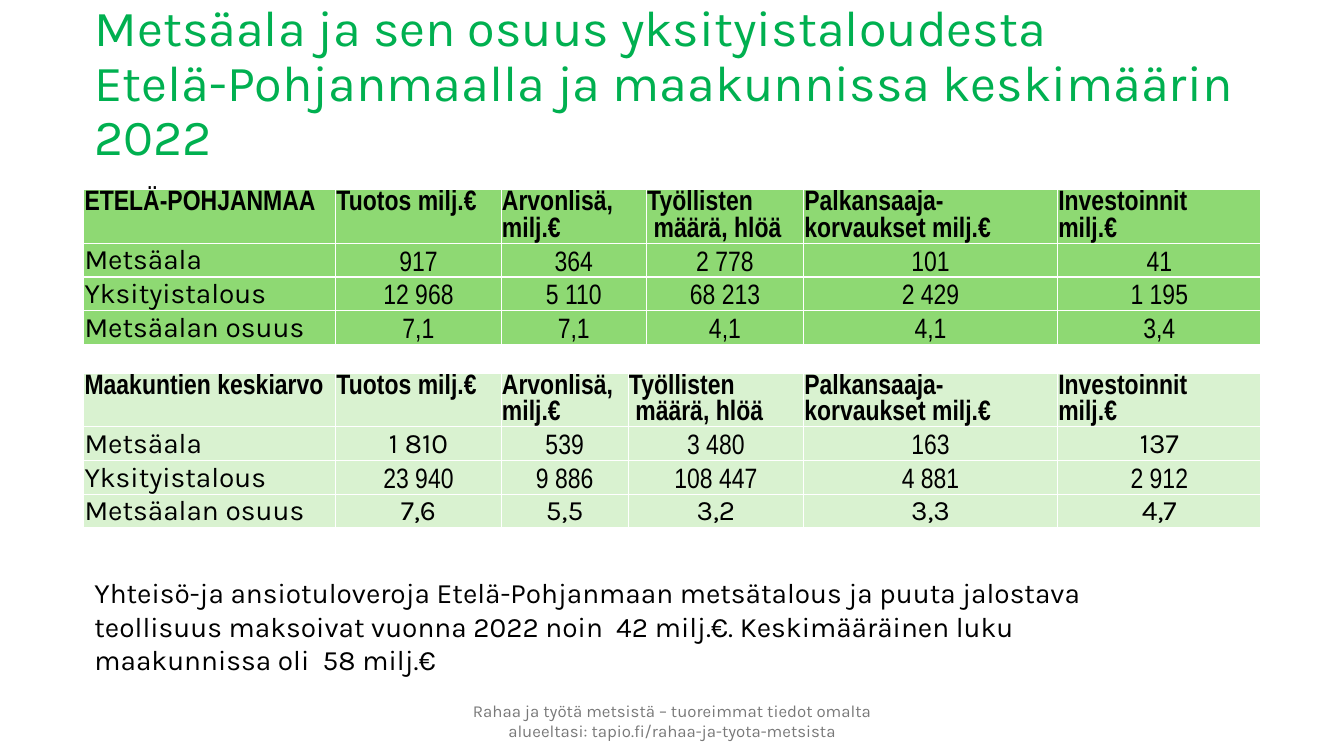
"""Build a slide comparing forestry's share of the regional economy."""
from dataclasses import dataclass

import pptx
import pptx.dml.color
import pptx.enum.text
import pptx.oxml
import pptx.oxml.ns
import pptx.util

Cm = pptx.util.Cm
Align = pptx.enum.text.PP_ALIGN
Anchor = pptx.enum.text.MSO_ANCHOR


@dataclass(frozen=True)
class Theme:
    text_font: str = "Karla"
    figure_font: str = "Arial Narrow"
    heading: str = "00B050"
    ink: str = "000000"
    muted: str = "797979"
    grid: str = "FFFFFF"
    region_fill: str = "8ED973"
    average_fill: str = "D9F2D0"
    heading_size: int = 36
    body_size: int = 20
    footer_size: int = 12
    grid_width: int = 1


THEME = Theme()

HEADING = [
    "Metsäala ja sen osuus yksityistaloudesta ",
    "Etelä-Pohjanmaalla ja maakunnissa keskimäärin 2022",
]
MEASURES = [
    ["Tuotos milj.€"],
    ["Arvonlisä, milj.€"],
    ["Työllisten", " määrä, hlöä"],
    ["Palkansaaja-korvaukset milj.€"],
    ["Investoinnit", "milj.€"],
]
SECTORS = ["Metsäala", "Yksityistalous", "Metsäalan osuus"]
AREAS = [
    {
        "name": "ETELÄ-POHJANMAA",
        "figures": [
            ["917", "364", "2 778", "101", "41"],
            ["12 968", "5 110", "68 213", "2 429", "1 195"],
            ["7,1", "7,1", "4,1", "4,1", "3,4"],
        ],
        "text_font_cells": set(),
        "fill": THEME.region_fill,
        "top": 4.78,
        "widths": [6.35, 4.17, 3.66, 3.96, 6.4, 5.13],
    },
    {
        "name": "Maakuntien keskiarvo",
        "figures": [
            ["1 810", "539", "3 480", "163", "137"],
            ["23 940", "9 886", "108 447", "4 881", "2 912"],
            ["7,6", "5,5", "3,2", "3,3", "4,7"],
        ],
        "text_font_cells": {(1, 1), (1, 5)} | {(3, column) for column in range(1, 6)},
        "fill": THEME.average_fill,
        "top": 9.4,
        "widths": [6.35, 4.17, 3.2, 4.42, 6.4, 5.13],
    },
]
TAXES = (
    "Yhteisö-ja ansiotuloveroja Etelä-Pohjanmaan metsätalous ja puuta jalostava "
    "teollisuus maksoivat vuonna 2022 noin  42 milj.€. Keskimääräinen luku "
    "maakunnissa oli  58 milj.€"
)
FOOTER = (
    "Rahaa ja työtä metsistä – tuoreimmat tiedot omalta alueeltasi: "
    "tapio.fi/rahaa-ja-tyota-metsista"
)

TABLE_LEFT = 2.11
ROW_HEIGHTS = [1.33, 0.85, 0.85, 0.85]
CELL_MARGIN = 0.02


def add_run(paragraph, text, size, color, font=THEME.text_font, bold=False):
    run = paragraph.add_run()
    run.text = text
    run.font.name = font
    run.font.size = pptx.util.Pt(size)
    run.font.bold = bold
    run.font.color.rgb = pptx.dml.color.RGBColor.from_string(color)


def add_heading(slide):
    title = slide.shapes.title
    title.left, title.top, title.width, title.height = map(Cm, (2.13, 0.3, 30.96, 3.68))
    frame = title.text_frame
    frame.word_wrap = True
    frame.auto_size = pptx.enum.text.MSO_AUTO_SIZE.NONE
    frame.vertical_anchor = Anchor.MIDDLE
    paragraph = frame.paragraphs[0]
    paragraph.alignment = Align.LEFT
    paragraph.line_spacing = 0.9
    for index, line in enumerate(HEADING):
        if index:
            paragraph.add_line_break()
        add_run(paragraph, line, THEME.heading_size, THEME.heading)


def add_note(slide, text, box, size, color, align, anchor):
    frame = slide.shapes.add_textbox(*map(Cm, box)).text_frame
    frame.word_wrap = True
    frame.vertical_anchor = anchor
    frame.paragraphs[0].alignment = align
    add_run(frame.paragraphs[0], text, size, color)


def style_cell(cell, fill, anchor):
    cell.margin_left = cell.margin_right = cell.margin_top = Cm(CELL_MARGIN)
    cell.margin_bottom = 0
    cell.vertical_anchor = anchor
    properties = cell._tc.get_or_add_tcPr()
    for side in ("lnL", "lnR", "lnT", "lnB"):
        properties.append(pptx.oxml.parse_xml(
            f'<a:{side} {pptx.oxml.ns.nsdecls("a")} w="{pptx.util.Pt(THEME.grid_width)}">'
            f'<a:solidFill><a:srgbClr val="{THEME.grid}"/></a:solidFill></a:{side}>'
        ))
    cell.fill.solid()
    cell.fill.fore_color.rgb = pptx.dml.color.RGBColor.from_string(fill)


def add_area_table(slide, area):
    rows = [[[area["name"]], *MEASURES]]
    rows += [[[text] for text in (sector, *figures)]
             for sector, figures in zip(SECTORS, area["figures"])]
    table = slide.shapes.add_table(
        len(rows), len(rows[0]), Cm(TABLE_LEFT), Cm(area["top"]),
        Cm(sum(area["widths"])), Cm(sum(ROW_HEIGHTS)),
    ).table
    table.first_row = table.horz_banding = False
    for column, width in zip(table.columns, area["widths"]):
        column.width = Cm(width)
    for row, height in zip(table.rows, ROW_HEIGHTS):
        row.height = Cm(height)
    for r, row in enumerate(rows):
        for c, lines in enumerate(row):
            header = r == 0
            uses_text_font = (not header and c == 0) or (r, c) in area["text_font_cells"]
            cell = table.cell(r, c)
            style_cell(cell, area["fill"], Anchor.TOP if header else Anchor.BOTTOM)
            frame = cell.text_frame
            for index, line in enumerate(lines):
                paragraph = frame.add_paragraph() if index else frame.paragraphs[0]
                paragraph.alignment = Align.LEFT if header or c == 0 else Align.CENTER
                add_run(paragraph, line, THEME.body_size, THEME.ink,
                        THEME.text_font if uses_text_font else THEME.figure_font, header)


def main():
    deck = pptx.Presentation()
    deck.slide_width, deck.slide_height = Cm(33.87), Cm(19.05)
    slide = deck.slides.add_slide(deck.slide_layouts[5])
    add_heading(slide)
    for area in AREAS:
        add_area_table(slide, area)
    add_note(slide, TAXES, (2.13, 14.38, 27.69, 1.96),
             THEME.body_size, THEME.ink, Align.LEFT, Anchor.TOP)
    add_note(slide, FOOTER, (10.97, 17.65, 11.94, 1.02),
             THEME.footer_size, THEME.muted, Align.CENTER, Anchor.MIDDLE)
    deck.save("out.pptx")


if __name__ == "__main__":
    main()
